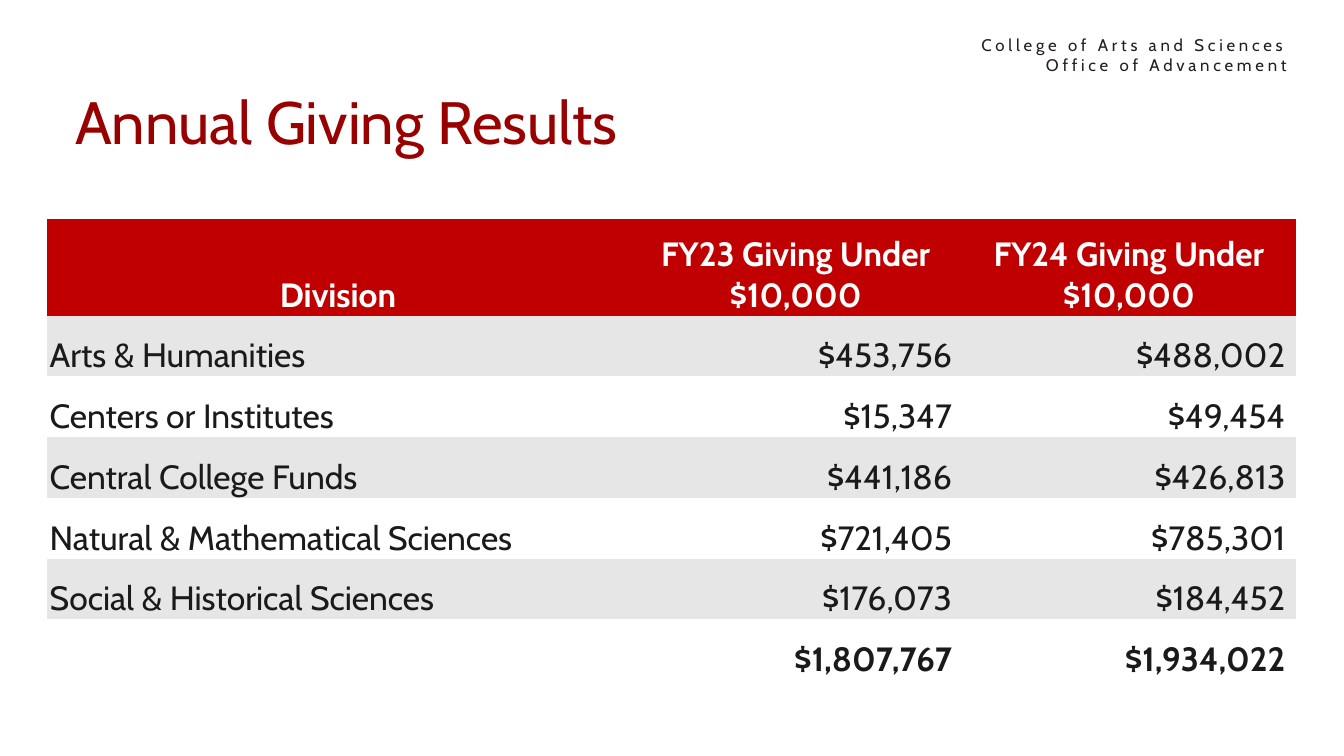
from dataclasses import dataclass

from pptx import Presentation
from pptx.dml.color import RGBColor
from pptx.enum.text import MSO_ANCHOR as Anchor, PP_ALIGN as Align
from pptx.util import Inches, Pt


@dataclass(frozen=True)
class Theme:
    font: str = "Cabin"
    title_color: str = "990000"
    header_fill: str = "C00000"
    header_text: str = "FFFFFF"
    band_fill: str = "E7E6E6"
    body_text: str = "1A1A1A"
    office_text: str = "231F20"
    title_size: int = 32
    table_size: int = 18
    office_size: int = 9


theme = Theme()
NO_STYLE_NO_GRID = "{2D5ABB26-0587-4C30-8999-92F81FD0307C}"


def write(text_frame, text, size, color, align=Align.LEFT, bold=False):
    text_frame.text = text
    paragraph = text_frame.paragraphs[0]
    paragraph.alignment = align
    for run in paragraph.runs:
        run.font.name = theme.font
        run.font.size = Pt(size)
        run.font.bold = bold
        run.font.color.rgb = RGBColor.from_string(color)
    return paragraph


def add_text_box(left, top, width, height, *text_style):
    box = slide.shapes.add_textbox(Inches(left), Inches(top), Inches(width), Inches(height))
    text_frame = box.text_frame
    text_frame.word_wrap = True
    text_frame.vertical_anchor = Anchor.MIDDLE
    text_frame.margin_left = text_frame.margin_right = Inches(0.1)
    text_frame.margin_top = text_frame.margin_bottom = Inches(0.1)
    return write(text_frame, *text_style)


# Widescreen slide, 16:9
presentation = Presentation()
presentation.slide_width = Inches(10)
presentation.slide_height = Inches(10 * 9 / 16)
slide = presentation.slides.add_slide(presentation.slide_layouts[6])

# Title
add_text_box(0.46, 0.42, 5.79, 0.95, "Annual Giving Results", theme.title_size, theme.title_color)

# Giving table
rows = [
    ("Division", "FY23 Giving Under $10,000", "FY24 Giving Under $10,000"),
    ("Arts & Humanities", "$453,756 ", "$488,002 "),
    ("Centers or Institutes", "$15,347 ", "$49,454 "),
    ("Central College Funds", "$441,186 ", "$426,813 "),
    ("Natural & Mathematical Sciences", "$721,405 ", "$785,301 "),
    ("Social & Historical Sciences", "$176,073 ", "$184,452 "),
    ("", "$1,807,767 ", "$1,934,022 "),
]
table_width, table_height = 9.29, 3.43
amount_width, header_height = 2.48, 0.72
column_widths = [table_width - 2 * amount_width, amount_width, amount_width]
body_height = (table_height - header_height) / (len(rows) - 1)
table = slide.shapes.add_table(
    len(rows), len(column_widths), Inches(0.35), Inches(1.63),
    Inches(table_width), Inches(table_height),
).table
table.first_row = table.horz_banding = False
table._tbl.tblPr[0].text = NO_STYLE_NO_GRID

for column, width in zip(table.columns, column_widths):
    column.width = Inches(width)

for row_index, values in enumerate(rows):
    is_header = row_index == 0
    is_total = row_index == len(rows) - 1
    table.rows[row_index].height = Inches(header_height if is_header else body_height)
    for column_index, value in enumerate(values):
        cell = table.cell(row_index, column_index)
        cell.vertical_anchor = Anchor.BOTTOM
        cell.margin_left = cell.margin_right = cell.margin_top = Inches(0.02)
        cell.margin_bottom = 0
        if is_header or row_index % 2:
            cell.fill.solid()
            fill = theme.header_fill if is_header else theme.band_fill
            cell.fill.fore_color.rgb = RGBColor.from_string(fill)
        else:
            cell.fill.background()
        align = Align.CENTER if is_header else Align.RIGHT if column_index else Align.LEFT
        color = theme.header_text if is_header else theme.body_text
        write(cell.text_frame, value, theme.table_size, color, align, is_header or is_total)

# Office name, letter-spaced with a hanging indent
office = add_text_box(
    6.72, 0.2, 2.95, 0.42, "College of Arts and Sciences Office of Advancement",
    theme.office_size, theme.office_text, Align.RIGHT,
)
properties = office._p.get_or_add_pPr()
properties.set("marL", str(Inches(0.5)))
properties.set("indent", str(Inches(-0.34)))
office.runs[0].font._element.set("spc", "200")

presentation.save("out.pptx")
